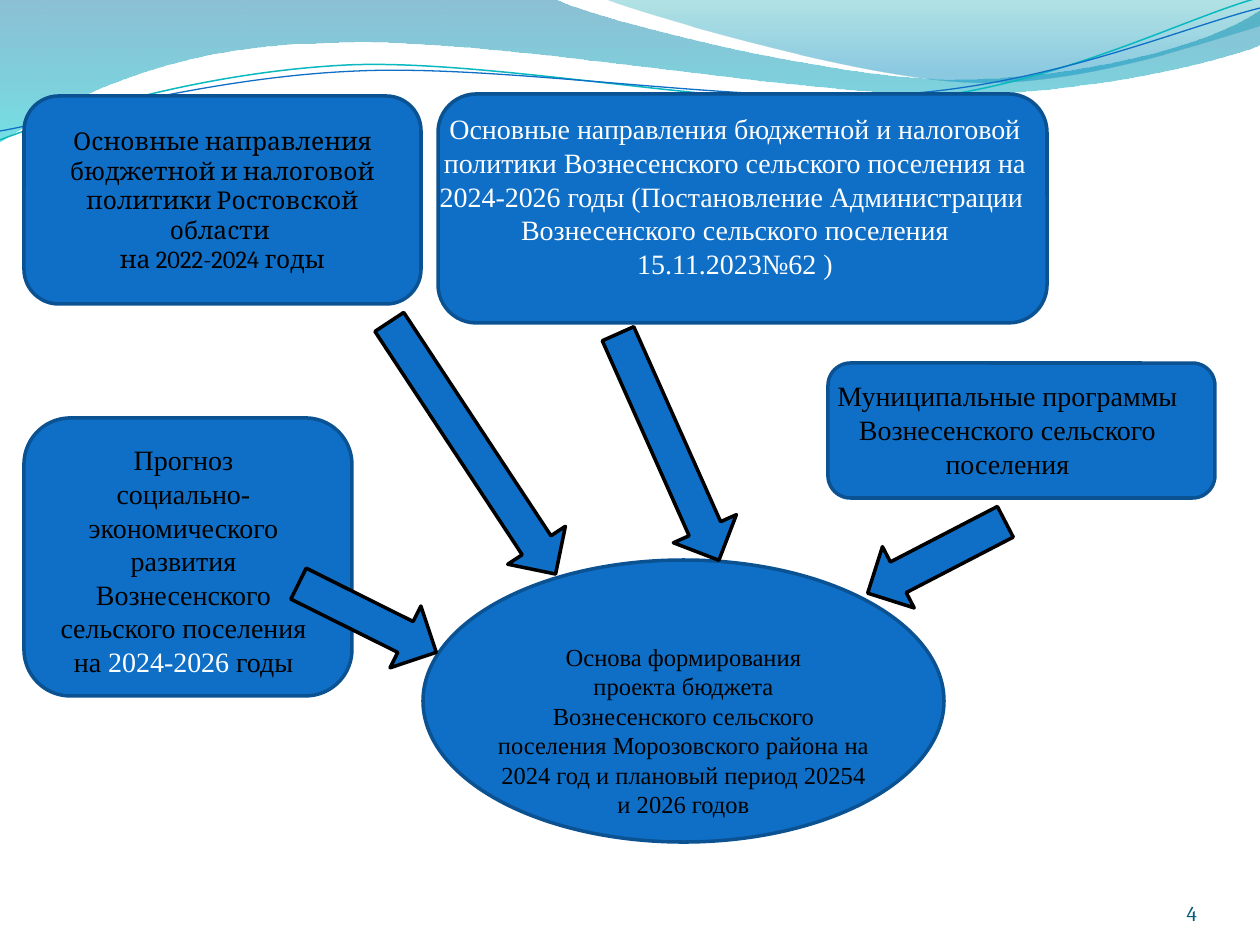
import math
import pptx
import pptx.util
import pptx.dml.color
import pptx.enum.shapes
import pptx.enum.text
from lxml import etree

PX = 914400 / 126
SHAPES = pptx.enum.shapes.MSO_SHAPE
ALIGN = pptx.enum.text.PP_ALIGN
ANCHOR = pptx.enum.text.MSO_ANCHOR
BLUE, EDGE, BLACK, WHITE = "0F6FC6", "0B5292", "000000", "FFFFFF"
SERIF = "Times New Roman"
DRAWING = "{http://schemas.openxmlformats.org/drawingml/2006/main}"


def px(value):
    return round(value * PX)


def colour(code):
    return pptx.dml.color.RGBColor.from_string(code)


def outline(shape, code, width):
    shape.line.color.rgb = colour(code)
    shape.line.width = pptx.util.Pt(width)


# A segment holds one point for a line, or two handles and an end for a curve
def add_outline(shapes, start, segments, close):
    builder = shapes.build_freeform(px(start[0]), px(start[1]), scale=1.0)
    builder.add_line_segments([(px(x), px(y)) for segment in segments for x, y in segment],
                              close=close)
    shape = builder.convert_to_shape()
    shape.shadow.inherit = False
    steps = iter(shape.element.spPr.findall(".//%slnTo" % DRAWING))
    for segment in segments:
        corners = [next(steps) for point in segment]
        if len(corners) == 3:
            curve = etree.Element(DRAWING + "cubicBezTo")
            corners[0].addprevious(curve)
            for corner in corners:
                curve.append(corner[0])
                corner.getparent().remove(corner)
    return shape


def add_wave(page, start, segments, stops):
    wave = add_outline(page.shapes, start, segments, True)
    wave.line.fill.background()
    wave.fill.gradient()
    wave.fill.gradient_angle = 270
    for stop, (position, code, opacity) in zip(wave.fill.gradient_stops, stops):
        stop.position = position
        stop.color.rgb = colour(code)
    tints = wave.element.spPr.findall(".//%ssrgbClr" % DRAWING)
    for tint, (position, code, opacity) in zip(tints, stops):
        etree.SubElement(tint, DRAWING + "alpha", val=str(opacity * 1000))


def turn(point, centre, degrees):
    angle = math.radians(degrees)
    x, y = point[0] - centre[0], point[1] - centre[1]
    return (centre[0] + x * math.cos(angle) - y * math.sin(angle),
            centre[1] + x * math.sin(angle) + y * math.cos(angle))


def add_header(page):
    add_wave(page, (0, 0),
             [[(554, -1)],
              [(600, 21), (837, 79), (955, 79)],
              [(1075, 79), (1207, 47), (1260, 11)],
              [(1261, 45)],
              [(1239, 55), (1096, 96), (940, 94)],
              [(784, 94), (481, 35), (324, 43)],
              [(163, 45), (58, 105), (-1, 142)],
              [(0, 0)]],
             [(0, "0074A1", 45), (1, "00C6CF", 55)])
    add_wave(page, (604, -1),
             [[(641, 14), (859, 78), (969, 82)],
              [(1079, 87), (1211, 40), (1260, 26)],
              [(1260, 0)],
              [(604, -1)]],
             [(0, "00A1A9", 30), (0.8, "008BBF", 45)])
    strands = [
        ("0AB8BF", 0.85, (629, 72), (0, 140), [[(60, 117), (199, 72), (349, 65)],
                                               [(498, 59), (747, 112), (898, 101)],
                                               [(1050, 89), (1182, 19), (1258, -2)]]),
        (BLUE, 0.75, (629, 74), (0, 131), [[(59, 121), (207, 77), (357, 71)],
                                           [(508, 64), (752, 106), (903, 94)],
                                           [(1053, 84), (1187, 26), (1260, 8)]]),
    ]
    tilt = 2.7
    group = page.shapes.add_group_shape()
    for code, width, centre, start, curves in strands:
        level = [[turn(point, centre, tilt) for point in curve] for curve in curves]
        strand = add_outline(group.shapes, turn(start, centre, tilt), level, False)
        strand.rotation = 360 - tilt
        strand.fill.background()
        outline(strand, code, width)


# Text: a line is a string, or a list of (words, colour) spans
def write_lines(frame, lines, size, font=SERIF, code=BLACK, align=ALIGN.CENTER):
    frame.word_wrap = True
    for index, line in enumerate(lines):
        para = frame.paragraphs[0] if index == 0 else frame.add_paragraph()
        para.alignment = align
        para.font.size = pptx.util.Pt(size)
        para.font.name = font
        para.font.color.rgb = colour(code)
        for words, tint in [(line, code)] if isinstance(line, str) else line:
            span = para.add_run()
            span.text = words
            if tint != code:
                span.font.color.rgb = colour(tint)


def add_label(page, box, lines, size, code=BLACK, margin_top=6):
    label = page.shapes.add_textbox(*map(px, box))
    label.text_frame.margin_top = px(margin_top)
    write_lines(label.text_frame, lines, size, code=code)


def add_panel(page, kind, box, edge=EDGE):
    panel = page.shapes.add_shape(kind, *map(px, box))
    panel.shadow.inherit = False
    panel.fill.solid()
    panel.fill.fore_color.rgb = colour(BLUE)
    outline(panel, edge, 2)
    return panel


def add_sources(page):
    rounded = SHAPES.ROUNDED_RECTANGLE
    region = add_panel(page, rounded, (24, 96, 397, 208))
    region.text_frame.vertical_anchor = ANCHOR.MIDDLE
    write_lines(region.text_frame,
                ["Основные направления бюджетной и налоговой политики Ростовской области ",
                 "на 2022-2024 годы"], 14, "Cambria")

    add_panel(page, rounded, (24, 418, 328, 278))
    add_panel(page, rounded, (828, 363, 387, 135))
    add_label(page, (799, 373, 417, 115),
              ["Муниципальные программы Вознесенского сельского поселения"], 16)
    add_label(page, (34, 403, 299, 285),
              ["Прогноз", "социально-", "экономического", "развития",
               [("Вознесенского сельского поселения на ", BLACK),
                ("2024-2026 ", WHITE), ("годы", BLACK)]], 16, margin_top=40)


def add_budget_label(page):
    add_label(page, (484, 593, 399, 233),
              ["Основа формирования", "проекта бюджета",
               "Вознесенского сельского поселения Морозовского района на 2024 год "
               "и плановый период 20254 и 2026 годов"], 14, margin_top=49)


def add_local_policy(page):
    add_panel(page, SHAPES.ROUNDED_RECTANGLE, (438, 94, 609, 229))
    add_label(page, (423, 106, 624, 183),
              ["Основные направления бюджетной и налоговой политики Вознесенского "
               "сельского поселения на 2024-2026 годы (Постановление Администрации  "
               "Вознесенского сельского поселения 15.11.2023№62 )"], 16, WHITE)


def add_arrows(page):
    for left, top, length, angle in [(902, 480, 155, 62.6), (438, 297, 302, 326.6),
                                     (333, 541, 154, 296.5), (634, 323, 248, 336)]:
        arrow = add_panel(page, SHAPES.DOWN_ARROW, (left, top, 69, length), BLACK)
        arrow.rotation = angle


def add_page_number(page, box):
    number = page.shapes.add_textbox(*map(px, box))
    frame = number.text_frame
    frame.margin_left = frame.margin_right = frame.margin_top = frame.margin_bottom = 0
    frame.vertical_anchor = ANCHOR.BOTTOM
    write_lines(frame, ["4"], 12, "Cambria", "045D75", ALIGN.RIGHT)


def main():
    deck = pptx.Presentation()
    deck.slide_width, deck.slide_height = px(1260), px(945)
    page = deck.slides.add_slide(deck.slide_layouts[6])
    add_header(page)
    add_page_number(page, (1092, 876, 105, 50))
    add_panel(page, SHAPES.OVAL, (423, 560, 521, 282))
    add_sources(page)
    add_budget_label(page)
    add_local_policy(page)
    add_arrows(page)
    deck.save("out.pptx")


if __name__ == "__main__":
    main()
